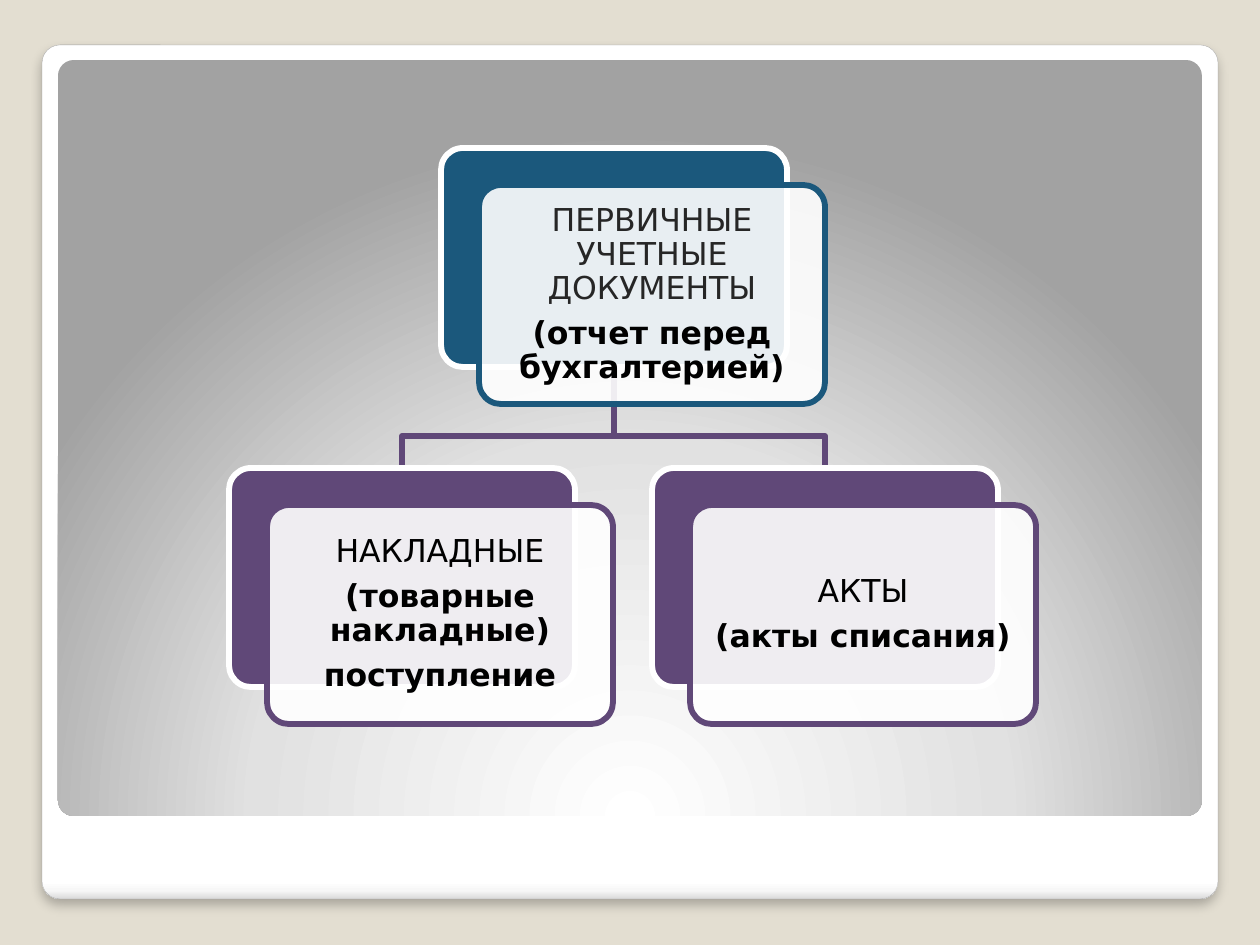
import pptx
import pptx.util
import pptx.dml.color
import pptx.enum.shapes
import pptx.enum.text
import pptx.oxml
import pptx.oxml.ns

RGB = pptx.dml.color.RGBColor
BEIGE = RGB(0xE3, 0xDE, 0xD1)
WHITE = RGB(0xFF, 0xFF, 0xFF)
BLACK = RGB(0x00, 0x00, 0x00)
CHARCOAL = RGB(0x26, 0x26, 0x26)
GREY = RGB(0xA4, 0xA4, 0xA4)
BLUE = RGB(0x1B, 0x58, 0x7C)
PURPLE = RGB(0x60, 0x48, 0x78)

PX = 914400 / 126
CARD_W, CARD_H = 346, 219
SHIFT_X, SHIFT_Y = 38, 37
LINEAR = '<a:lin ang="5400000" scaled="0"/>'
RADIAL = ('<a:path path="circle"><a:fillToRect l="50000" t="175000" '
          'r="50000" b="-75000"/></a:path>')


def emu(px):
    return pptx.util.Emu(round(px * PX))


def xml(tag, body, attrs=""):
    ns = pptx.oxml.ns.nsdecls("a")
    return pptx.oxml.parse_xml(f"<a:{tag} {ns} {attrs}>{body}</a:{tag}>")


class Deck:
    font = "DejaVu Sans"
    size = pptx.util.Pt(18)
    line_width = pptx.util.Pt(3.35)

    def __init__(self):
        self.prs = pptx.Presentation()
        self.prs.slide_width, self.prs.slide_height = emu(1260), emu(945)

    def new_slide(self, color):
        self.s = self.prs.slides.add_slide(self.prs.slide_layouts[6])
        self.s.background.fill.solid()
        self.s.background.fill.fore_color.rgb = color

    def stroke(self, sp, color, width=None):
        sp.line.color.rgb = color
        sp.line.width = width or self.line_width

    def box(self, x, y, w, h, radius):
        kind = pptx.enum.shapes.MSO_SHAPE.ROUNDED_RECTANGLE
        sp = self.s.shapes.add_shape(kind, emu(x), emu(y), emu(w), emu(h))
        sp.adjustments[0] = radius
        sp.shadow.inherit = False
        return sp

    def panel(self, x, y, w, h, stops, direction):
        sp = self.box(x, y, w, h, 0.021)
        gs = "".join(f'<a:gs pos="{pos * 1000}"><a:srgbClr val="{c}"/></a:gs>'
                     for pos, c in stops)
        grad = xml("gradFill", f"<a:gsLst>{gs}</a:gsLst>{direction}",
                   'rotWithShape="1"')
        sp._element.spPr.find(pptx.oxml.ns.qn("a:prstGeom")).addnext(grad)
        sp.line.fill.background()
        return sp

    def drop_shadow(self, sp):
        color = '<a:srgbClr val="000000"><a:alpha val="25000"/></a:srgbClr>'
        effects = sp._element.spPr.find(pptx.oxml.ns.qn("a:effectLst"))
        effects.append(xml("outerShdw", color,
                           'blurRad="76200" dist="50800" dir="5400000" '
                           'algn="t" rotWithShape="0"'))

    def branch(self, points, color):
        (x, y), *rest = points
        fb = self.s.shapes.build_freeform(emu(x), emu(y))
        fb.add_line_segments([(emu(a), emu(b)) for a, b in rest], close=False)
        sp = fb.convert_to_shape()
        sp.fill.background()
        sp.shadow.inherit = False
        self.stroke(sp, color)

    def card(self, x, y, color, title, title_color, details):
        back = self.box(x, y, CARD_W, CARD_H, 0.1)
        back.fill.solid()
        back.fill.fore_color.rgb = color
        self.stroke(back, WHITE)

        front = self.box(x + SHIFT_X, y + SHIFT_Y, CARD_W, CARD_H, 0.1)
        front.fill.solid()
        front.fill.fore_color.rgb = WHITE
        fill = front._element.spPr.find(pptx.oxml.ns.qn("a:solidFill"))
        fill[0].append(xml("alpha", "", 'val="90000"'))
        self.stroke(front, color)

        tf = front.text_frame
        tf.word_wrap = True
        tf.vertical_anchor = pptx.enum.text.MSO_ANCHOR.MIDDLE
        tf.margin_left = tf.margin_right = emu(9)
        tf.margin_top = tf.margin_bottom = emu(9)
        for i, text in enumerate([title, *details]):
            p = tf.add_paragraph() if i else tf.paragraphs[0]
            p.alignment = pptx.enum.text.PP_ALIGN.CENTER
            p.line_spacing = 0.9
            p.space_after = pptx.util.Pt(6.3)
            r = p.add_run()
            r.text = text
            r.font.name, r.font.size = self.font, self.size
            r.font.bold = i > 0
            r.font.color.rgb = BLACK if i else title_color


def main():
    deck = Deck()
    deck.new_slide(BEIGE)

    # Framed backdrop
    frame = deck.panel(42, 45, 1176, 854,
                       [(0, "FFFFFF"), (98, "FFFFFF"), (99, "F7F7F7"),
                        (100, "DADADA")], LINEAR)
    deck.stroke(frame, GREY, pptx.util.Pt(0.16))
    deck.drop_shadow(frame)
    deck.panel(58, 60, 1144, 756,
               [(0, "FFFFFF"), (55, "E1E1E1"), (100, "A2A2A2")], RADIAL)

    # Branches from the root card to its children
    root_x, root_y, child_y, bend_y = 441, 148, 468, 436
    child_xs = (229, 652)
    mid = CARD_W // 2
    for x in reversed(child_xs):
        deck.branch([(root_x + mid, root_y + CARD_H), (root_x + mid, bend_y),
                     (x + mid, bend_y), (x + mid, child_y)], PURPLE)

    # Cards
    deck.card(root_x, root_y, BLUE, "ПЕРВИЧНЫЕ УЧЕТНЫЕ ДОКУМЕНТЫ", CHARCOAL,
              ["(отчет перед бухгалтерией)"])
    children = [("НАКЛАДНЫЕ", ["(товарные накладные)", "поступление"]),
                ("АКТЫ", ["(акты списания)"])]
    for x, (title, details) in zip(child_xs, children):
        deck.card(x, child_y, PURPLE, title, BLACK, details)

    deck.prs.save("out.pptx")


if __name__ == "__main__":
    main()
